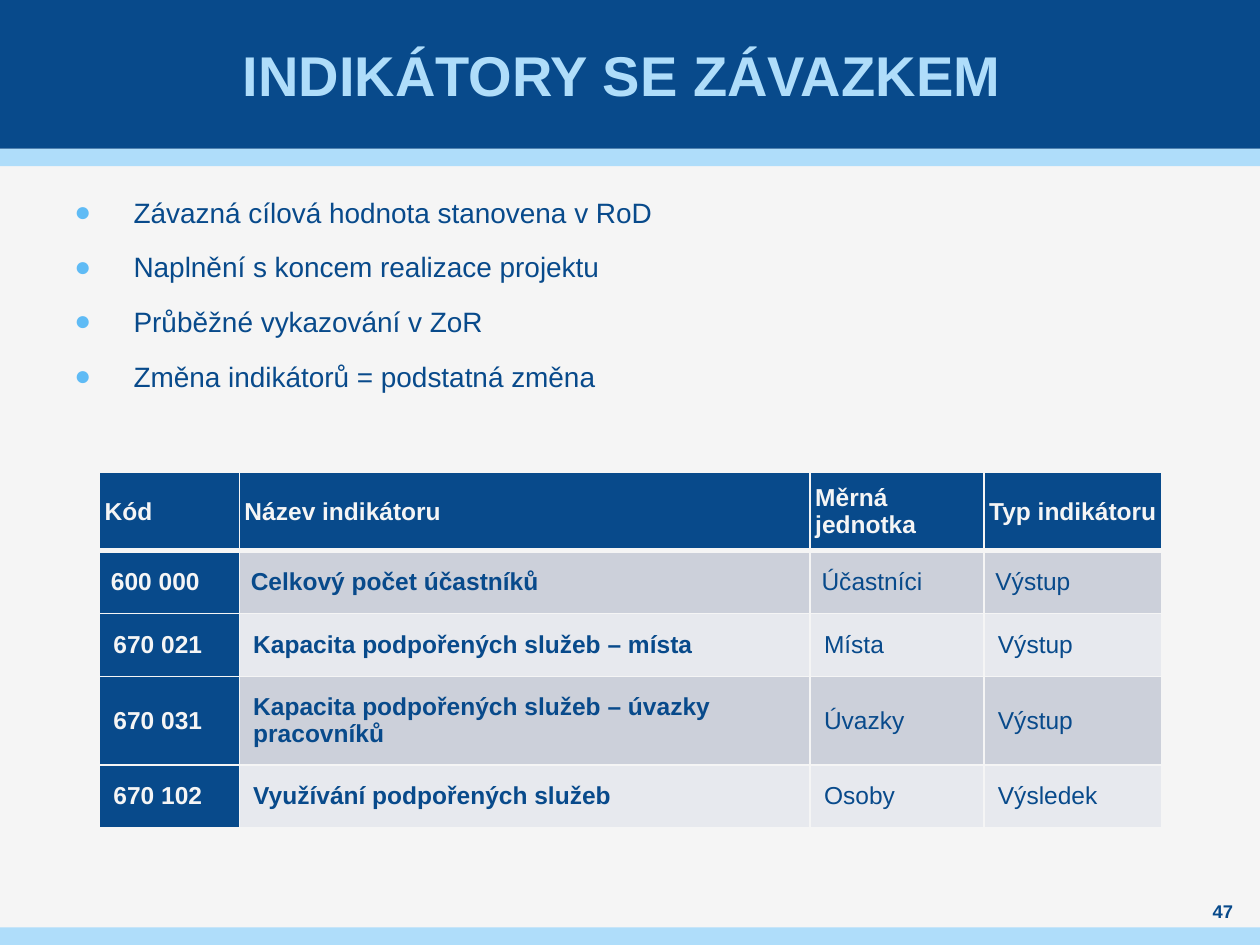
from lxml import etree
from pptx import Presentation
from pptx.dml.color import RGBColor
from pptx.enum.shapes import MSO_SHAPE
from pptx.enum.text import MSO_ANCHOR, MSO_AUTO_SIZE, PP_ALIGN
from pptx.oxml.ns import qn
from pptx.util import Inches, Pt

RECTANGLE = MSO_SHAPE.RECTANGLE
TOP, MIDDLE = MSO_ANCHOR.TOP, MSO_ANCHOR.MIDDLE
LEFT, CENTER, JUSTIFY = PP_ALIGN.LEFT, PP_ALIGN.CENTER, PP_ALIGN.JUSTIFY
NO_AUTOFIT = MSO_AUTO_SIZE.NONE

NAVY, SKY, BULLET_BLUE, PAPER = "084A8B", "AFDDFA", "5FBBF5", "F5F5F5"
ROW_FILLS = ("CCD0DA", "E7E9EE")
FONT = "Arial"

TITLE = "INDIKÁTORY SE ZÁVAZKEM"
BULLETS = [
    "Závazná cílová hodnota stanovena v RoD",
    "Naplnění s koncem realizace projektu",
    "Průběžné vykazování v ZoR",
    "Změna indikátorů = podstatná změna",
]
HEADER = ["Kód", "Název indikátoru", "Měrná jednotka", "Typ indikátoru"]
INDICATORS = [
    ["600 000", "Celkový počet účastníků", "Účastníci", "Výstup"],
    ["670 021", "Kapacita podpořených služeb – místa", "Místa", "Výstup"],
    ["670 031", "Kapacita podpořených služeb – úvazky pracovníků", "Úvazky", "Výstup"],
    ["670 102", "Využívání podpořených služeb", "Osoby", "Výsledek"],
]
COLUMN_WIDTHS = [1.11, 4.53, 1.38, 1.41]
ROW_HEIGHTS = [0.62, 0.5, 0.5, 0.7, 0.5]
CELL_INSETS = [0, 0.05, 0.07, 0.07, 0.07]


def color(hex_value):
    return RGBColor.from_string(hex_value)


def set_values(target, values):
    for name, value in values.items():
        setattr(target, name, value)


def place(shape, left, top, width, height):
    set_values(shape, {"left": Inches(left), "top": Inches(top),
                       "width": Inches(width), "height": Inches(height)})


def margins(left=0, right=0):
    return {"margin_left": Inches(left), "margin_right": Inches(right),
            "margin_top": 0, "margin_bottom": 0}


def write(paragraph, text, size, hex_color, bold=False, **paragraph_format):
    run = paragraph.add_run()
    run.text = text
    set_values(run.font, {"name": FONT, "size": Pt(size), "bold": bold})
    run.font.color.rgb = color(hex_color)
    set_values(paragraph, paragraph_format)


def indent(paragraph, left, first=0):
    properties = paragraph._p.get_or_add_pPr()
    properties.set("marL", str(Inches(left)))
    properties.set("indent", str(Inches(first)))
    return properties


def add_bar(slide, top, height, fill):
    bar = slide.shapes.add_shape(RECTANGLE, 0, Inches(top), Inches(10), Inches(height))
    bar.shadow.inherit = False
    bar.fill.solid()
    bar.fill.fore_color.rgb = color(fill)
    bar.line.fill.background()


def fill_title(title):
    place(title, 0.39, 0, 9.21, 1.18)
    # The wider right margin sets the title slightly left of centre
    set_values(title.text_frame, {**margins(0.04, 0.16), "vertical_anchor": MIDDLE,
                                  "auto_size": NO_AUTOFIT})
    write(title.text_frame.paragraphs[0], TITLE, 32, SKY, True, alignment=CENTER)


def add_bullet(paragraph):
    properties = indent(paragraph, 0.47, -0.47)
    bullet_color = etree.SubElement(properties, qn("a:buClr"))
    etree.SubElement(bullet_color, qn("a:srgbClr"), val=BULLET_BLUE)
    etree.SubElement(properties, qn("a:buFont"), typeface=FONT)
    etree.SubElement(properties, qn("a:buChar"), char="●")


def fill_body(body):
    place(body, 0.59, 1.55, 8.82, 5.15)
    frame = body.text_frame
    set_values(frame, {**margins(), "vertical_anchor": TOP, "auto_size": NO_AUTOFIT})
    for index, text in enumerate(BULLETS):
        paragraph = frame.add_paragraph() if index else frame.paragraphs[0]
        write(paragraph, text, 16, NAVY, alignment=JUSTIFY,
              space_before=Pt(6), space_after=Pt(6))
        add_bullet(paragraph)


def add_page_number(slide, number):
    box = slide.shapes.add_textbox(Inches(9.45), Inches(7.13), Inches(0.51), Inches(0.2))
    set_values(box.text_frame, {**margins(), "word_wrap": True, "vertical_anchor": MIDDLE})
    write(box.text_frame.paragraphs[0], number, 10.5, NAVY, True, alignment=CENTER)


def set_borders(cell, widths):
    properties = cell._tc.get_or_add_tcPr()
    for position, (side, width) in enumerate(widths.items()):
        line = etree.Element(qn(f"a:ln{side}"), w=str(Pt(width)))
        fill = etree.SubElement(line, qn("a:solidFill"))
        etree.SubElement(fill, qn("a:srgbClr"), val=PAPER)
        properties.insert(position, line)


def fill_cell(cell, text, row, column):
    dark = row == 0 or column == 0
    inset = CELL_INSETS[row]
    set_values(cell, {**margins(inset, inset), "vertical_anchor": MIDDLE})
    cell.fill.solid()
    cell.fill.fore_color.rgb = color(NAVY if dark else ROW_FILLS[(row - 1) % 2])
    paragraph = cell.text_frame.paragraphs[0]
    write(paragraph, text, 14, PAPER if dark else NAVY, dark or column == 1,
          alignment=LEFT, space_before=Pt(3), space_after=Pt(3))
    indent(paragraph, 0.04)
    # A thicker rule separates the header from the indicators
    set_borders(cell, {"L": 1, "R": 1, "T": 3 if row == 1 else 1, "B": 3 if row == 0 else 1})


def add_indicator_table(slide):
    rows = [HEADER] + INDICATORS
    table = slide.shapes.add_table(
        len(rows), len(HEADER), Inches(0.79), Inches(3.75),
        Inches(sum(COLUMN_WIDTHS)), Inches(sum(ROW_HEIGHTS))).table
    set_values(table, {"first_row": True, "first_col": True, "horz_banding": False})
    for column, width in zip(table.columns, COLUMN_WIDTHS):
        column.width = Inches(width)
    for row, height in zip(table.rows, ROW_HEIGHTS):
        row.height = Inches(height)
    for row, texts in enumerate(rows):
        for column, text in enumerate(texts):
            fill_cell(table.cell(row, column), text, row, column)


def main():
    presentation = Presentation()
    set_values(presentation, {"slide_width": Inches(10), "slide_height": Inches(7.5)})
    slide = presentation.slides.add_slide(presentation.slide_layouts[1])
    slide.background.fill.solid()
    slide.background.fill.fore_color.rgb = color(PAPER)

    # Coloured bars
    add_bar(slide, 1.18, 0.14, SKY)
    add_bar(slide, 0, 1.18, NAVY)
    add_bar(slide, 7.36, 0.14, SKY)

    # Title and list, brought in front of the bars
    title, body = slide.placeholders
    for placeholder in (title, body):
        slide.shapes._spTree.append(placeholder._element)
    fill_title(title)
    fill_body(body)

    # Page number and table
    add_page_number(slide, "47")
    add_indicator_table(slide)
    presentation.save("out.pptx")


if __name__ == "__main__":
    main()
